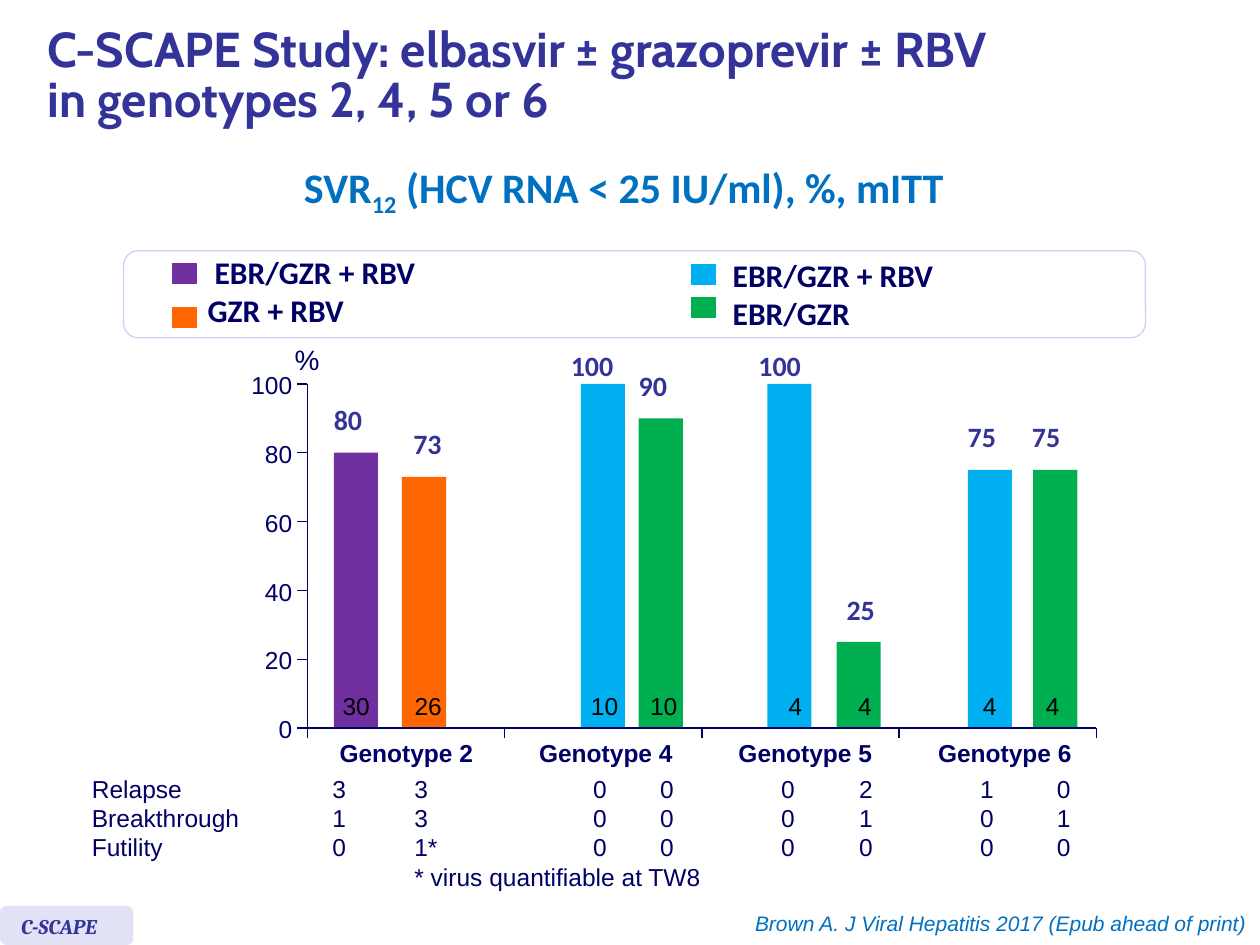
from dataclasses import dataclass

from lxml import etree
from pptx import Presentation
from pptx.dml.color import RGBColor
from pptx.enum.shapes import MSO_CONNECTOR, MSO_SHAPE
from pptx.enum.text import MSO_ANCHOR, MSO_AUTO_SIZE, PP_ALIGN
from pptx.oxml.ns import qn
from pptx.util import Pt

STRAIGHT = MSO_CONNECTOR.STRAIGHT
RECTANGLE, ROUNDED = MSO_SHAPE.RECTANGLE, MSO_SHAPE.ROUNDED_RECTANGLE
LEFT, CENTER, RIGHT = PP_ALIGN.LEFT, PP_ALIGN.CENTER, PP_ALIGN.RIGHT
MIDDLE = MSO_ANCHOR.MIDDLE
GROW = MSO_AUTO_SIZE.SHAPE_TO_FIT_TEXT

INDIGO = RGBColor(0x33, 0x33, 0x99)
NAVY = RGBColor(0x00, 0x00, 0x66)
BLUE = RGBColor(0x00, 0x70, 0xC0)
BLACK = RGBColor(0x00, 0x00, 0x00)
WHITE = RGBColor(0xFF, 0xFF, 0xFF)
LAVENDER = RGBColor(0xE2, 0xE2, 0xF6)
BORDER = RGBColor(0xD0, 0xD0, 0xF0)
PURPLE = RGBColor(0x70, 0x30, 0xA0)
ORANGE = RGBColor(0xFF, 0x66, 0x00)
SKY = RGBColor(0x00, 0xB0, 0xF0)
GREEN = RGBColor(0x00, 0xB0, 0x50)

# Chart frame, in points
AXIS_X, BASE_Y, AXIS_HEIGHT = 175.7, 416, 196.6
GROUP_WIDTH = 112.7
BAR_WIDTH = 25.2
TICK = 5.8
DIGIT_WIDTH = 7.8
OUTCOME_TOP = 438.5


@dataclass
class Style:
    font: str
    size: float
    color: RGBColor
    bold: bool = False
    italic: bool = False


@dataclass
class Bar:
    x: float
    rate: int
    color: RGBColor
    rate_x: float
    patients: int
    patients_x: float
    outcomes: list[str]
    outcomes_x: float
    outcomes_width: float = 22.3


@dataclass
class Swatch:
    x: float
    y: float
    color: RGBColor


AXIS_TEXT = Style("Arial", 14, NAVY)
GENOTYPE_TEXT = Style("Arial", 14, NAVY, bold=True)
COUNT_TEXT = Style("Arial", 14, BLACK)
RATE_TEXT = Style("Calibri", 16, INDIGO, bold=True)
LEGEND_TEXT = Style("Calibri", 18, NAVY, bold=True)

BARS = [
    Bar(190.8, 80, PURPLE, 190.8, 30, 195.8, ["3", "1", "0"], 182.9),
    Bar(229.7, 73, ORANGE, 236.2, 26, 236.9,
        ["3", "3", "1*", "* virus quantifiable at TW8"], 229.7, 179.3),
    Bar(331.9, 100, SKY, 326.2, 10, 337.7, ["0", "0", "0"], 331.9),
    Bar(365, 90, GREEN, 365, 10, 371.5, ["0", "0", "0"], 370.1),
    Bar(438.5, 100, SKY, 433.4, 4, 450.7, ["0", "0", "0"], 439.2),
    Bar(478.1, 25, GREEN, 483.8, 4, 490.3, ["2", "1", "0"], 483.8),
    Bar(553, 75, SKY, 553, 4, 561.6, ["1", "0", "0"], 553),
    Bar(590.4, 75, GREEN, 589.7, 4, 597.6, ["0", "1", "0"], 596.9),
]

SWATCHES = [
    Swatch(98.6, 150.5, PURPLE),
    Swatch(98.6, 175.7, ORANGE),
    Swatch(395.3, 151.2, SKY),
    Swatch(395.3, 169.9, GREEN),
]


def add_block(page, kind, x, y, width, height, fill, outline=None):
    shape = page.shapes.add_shape(kind, Pt(x), Pt(y), Pt(width), Pt(height))
    shape.shadow.inherit = False
    shape.fill.solid()
    shape.fill.fore_color.rgb = fill
    if outline is None:
        shape.line.fill.background()
    else:
        shape.line.color.rgb = outline
        shape.line.width = Pt(0.75)
    return shape


def add_line(page, x1: float, y1: float, x2: float, y2: float) -> None:
    line = page.shapes.add_connector(STRAIGHT, Pt(x1), Pt(y1), Pt(x2), Pt(y2))
    line.line.color.rgb = NAVY
    line.line.width = Pt(0.75)
    etree.SubElement(line._element.spPr, qn("a:effectLst"))


def add_text(page, x: float, y: float, width: float, height: float,
             lines: list[str], style: Style, align=LEFT,
             wrap: bool = False, inset: bool = True):
    box = page.shapes.add_textbox(Pt(x), Pt(y), Pt(width), Pt(height))
    frame = box.text_frame
    frame.word_wrap = wrap
    frame.auto_size = GROW
    if not inset:
        frame.margin_left = frame.margin_right = Pt(0)
        frame.margin_top = frame.margin_bottom = Pt(0)
    for index, line in enumerate(lines):
        para = frame.paragraphs[0] if index == 0 else frame.add_paragraph()
        if line:
            para.add_run().text = line
        para.alignment = align
        para.font.name = style.font
        para.font.size = Pt(style.size)
        para.font.color.rgb = style.color
        para.font.bold = style.bold
        para.font.italic = style.italic
    return frame


def add_title(page) -> None:
    frame = add_text(page, 20.2, 5.8, 683.3, 77,
                     ["C-SCAPE Study: elbasvir ± grazoprevir ± RBV"],
                     Style("Cabin", 28, INDIGO, bold=True), wrap=True)
    frame.auto_size = MSO_AUTO_SIZE.NONE
    frame.vertical_anchor = MIDDLE
    para = frame.paragraphs[0]
    para.line_spacing = 0.85
    para.add_line_break()
    para.add_run().text = "in genotypes 2, 4, 5 or 6"

    heading = add_text(page, 163.6, 88.6, 385.9, 36, ["SVR"],
                       Style("Calibri", 24, BLUE, bold=True), CENTER)
    para = heading.paragraphs[0]
    span = para.add_run()
    span.text = "12"
    span.font._element.set("baseline", "-25000")
    para.add_run().text = " (HCV RNA < 25 IU/ml), %, mITT"


def add_legend(page) -> None:
    add_block(page, ROUNDED, 70.6, 143.3, 583.9, 49.7, WHITE, BORDER)
    for swatch in SWATCHES:
        add_block(page, RECTANGLE, swatch.x, swatch.y, 13.7, 11.5,
                  swatch.color, swatch.color)
    frame = add_text(page, 111.6, 141.1, 134.6, 51.1,
                     ["EBR/GZR + RBV", "GZR + RBV"], LEGEND_TEXT)
    frame.paragraphs[0]._p.get_or_add_pPr().set("marL", str(Pt(4)))
    add_text(page, 411.6, 142.6, 130.6, 51.1,
             ["EBR/GZR + RBV", "EBR/GZR"], LEGEND_TEXT)


def add_axes(page) -> None:
    add_line(page, AXIS_X, BASE_Y - AXIS_HEIGHT, AXIS_X, BASE_Y)
    add_line(page, AXIS_X, BASE_Y, AXIS_X + 4 * GROUP_WIDTH, BASE_Y)
    for value in range(0, 101, 20):
        y = BASE_Y - AXIS_HEIGHT * value / 100
        width = DIGIT_WIDTH * len(str(value))
        add_line(page, AXIS_X - TICK, y, AXIS_X, y)
        add_text(page, 167 - width, y - 7.8, width, 17, [str(value)],
                 AXIS_TEXT, inset=False)
    for index in range(5):
        x = AXIS_X + index * GROUP_WIDTH
        add_line(page, x, BASE_Y + TICK, x, BASE_Y)
    for index, genotype in enumerate((2, 4, 5, 6)):
        add_text(page, 194 + 114 * index, 421.9, 76.5, 17,
                 [f"Genotype {genotype}"], GENOTYPE_TEXT, inset=False)
    add_text(page, 161.3, 192.2, 28.8, 26.6, ["%"], Style("Arial", 16, NAVY))


def add_bar(page, bar: Bar) -> None:
    height = AXIS_HEIGHT * bar.rate / 100
    top = BASE_Y - height
    add_block(page, RECTANGLE, bar.x, top, BAR_WIDTH, height, bar.color)
    rate, patients = str(bar.rate), str(bar.patients)
    add_text(page, bar.rate_x, max(top - 28.5, 199.4), 8.1 * len(rate), 19.4,
             [rate], RATE_TEXT, inset=False)
    add_text(page, bar.patients_x, 394.6, DIGIT_WIDTH * len(patients), 17,
             [patients], COUNT_TEXT, CENTER, inset=False)
    add_text(page, bar.outcomes_x, OUTCOME_TOP, bar.outcomes_width,
             7.2 + 17 * len(bar.outcomes), bar.outcomes, AXIS_TEXT)


def add_footer(page) -> None:
    add_block(page, ROUNDED, 0, 517.7, 76.3, 22.3, LAVENDER)
    add_text(page, 5, 518.4, 82.8, 21.6, ["C-SCAPE"],
             Style("Cambria", 12, INDIGO, bold=True, italic=True), wrap=True)
    add_text(page, 394.6, 517, 324.7, 21.6,
             ["Brown A. J Viral Hepatitis 2017 (Epub ahead of print)"],
             Style("Arial", 12, BLUE, italic=True), RIGHT, wrap=True)


def main() -> None:
    deck = Presentation()
    deck.slide_width, deck.slide_height = Pt(720), Pt(540)
    page = deck.slides.add_slide(deck.slide_layouts[6])
    add_title(page)
    add_legend(page)
    # Bars first, so that the axes lie over their feet
    for bar in BARS:
        add_bar(page, bar)
    add_axes(page)
    add_text(page, 45.4, OUTCOME_TOP, 99.4, 58.3,
             ["Relapse", "Breakthrough", "Futility"], AXIS_TEXT)
    add_footer(page)
    deck.save("out.pptx")


if __name__ == "__main__":
    main()
